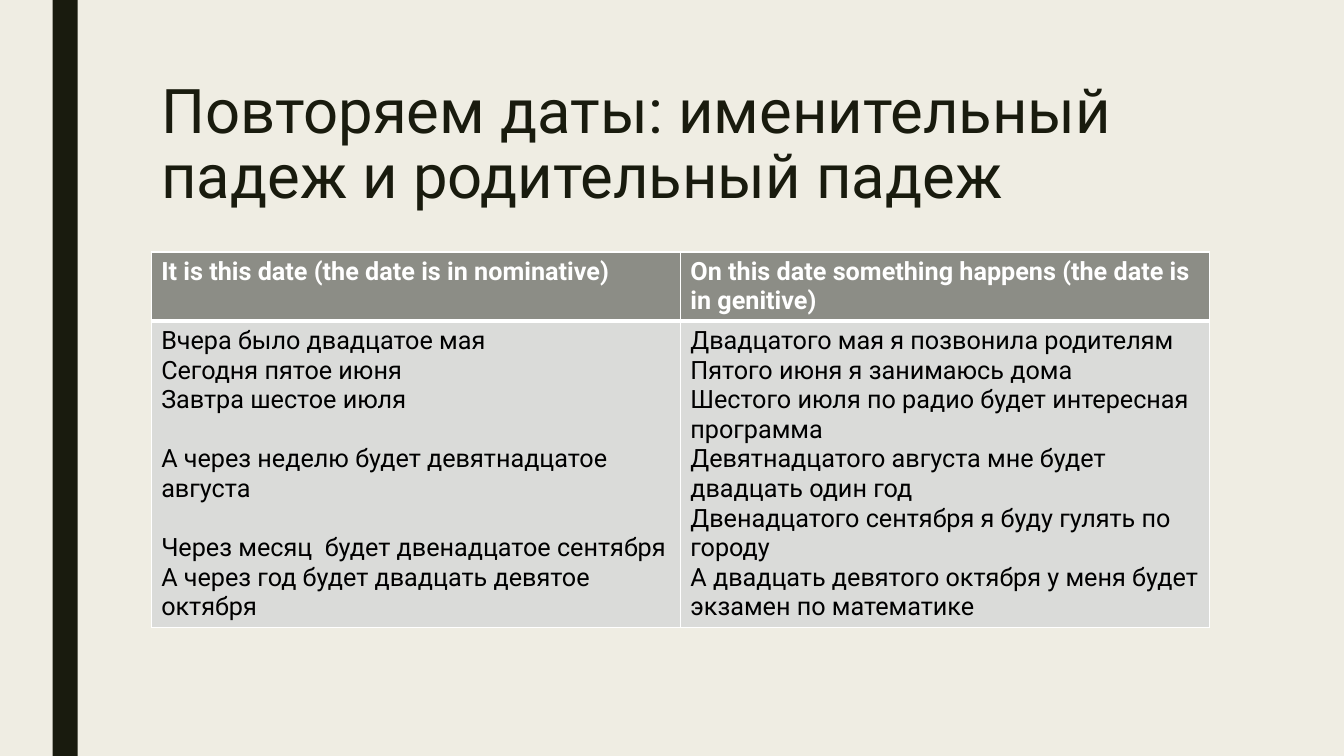
from lxml.etree import SubElement
from pptx import Presentation
from pptx.dml.color import RGBColor
from pptx.enum.shapes import MSO_SHAPE as Shape
from pptx.enum.text import MSO_ANCHOR as Anchor, PP_ALIGN as Align
from pptx.oxml.ns import qn
from pptx.util import Cm, Pt

PAPER = RGBColor(0xEF, 0xED, 0xE3)
INK = RGBColor(0x19, 0x1B, 0x0E)
HEADER_GRAY = RGBColor(0x8C, 0x8D, 0x86)
BODY_GRAY = RGBColor(0xDA, 0xDB, 0xD9)
WHITE = RGBColor(0xFF, 0xFF, 0xFF)
BLACK = RGBColor(0, 0, 0)
FONT = "Roboto"
BLANK_LINE = Pt(21.1)

# Each column: heading, then sentences with the space above each
COLUMNS = [
    ("It is this date (the date is in nominative)", [
        ("Вчера было двадцатое мая", 0),
        ("Сегодня пятое июня", 0),
        ("Завтра шестое июля", 0),
        ("А через неделю будет девятнадцатое августа", BLANK_LINE),
        ("Через месяц  будет двенадцатое сентября", BLANK_LINE),
        ("А через год будет двадцать девятое октября", 0),
    ]),
    ("On this date something happens (the date is in genitive)", [
        ("Двадцатого мая я позвонила родителям", 0),
        ("Пятого июня я занимаюсь дома", 0),
        ("Шестого июля по радио будет интересная программа", 0),
        ("Девятнадцатого августа мне будет двадцать один год", 0),
        ("Двенадцатого сентября я буду гулять по городу", 0),
        ("А двадцать девятого октября у меня будет экзамен по математике", 0),
    ]),
]


def add_text(paragraph, text, size, color, bold=False):
    run = paragraph.add_run()
    run.text = text
    run.font.name = FONT
    run.font.size = Pt(size)
    run.font.color.rgb = color
    run.font.bold = bold


def style_cell(cell, fill, top, bottom):
    """Fill a cell and draw its white borders; top and bottom are widths in points."""
    properties = cell._tc.get_or_add_tcPr()
    for side, width in (("L", 1), ("R", 1), ("T", top), ("B", bottom)):
        border = SubElement(properties, qn(f"a:ln{side}"), w=str(Pt(width)))
        SubElement(SubElement(border, qn("a:solidFill")), qn("a:srgbClr"), val=str(WHITE))
    cell.fill.solid()
    cell.fill.fore_color.rgb = fill


prs = Presentation()
prs.slide_width, prs.slide_height = Cm(33.87), Cm(19.05)
slide = prs.slides.add_slide(prs.slide_layouts[5])
slide.background.fill.solid()
slide.background.fill.fore_color.rgb = PAPER

side_bar = slide.shapes.add_shape(Shape.RECTANGLE, Cm(1.33), 0, Cm(0.63), prs.slide_height)
side_bar.shadow.inherit = False
side_bar.fill.solid()
side_bar.fill.fore_color.rgb = INK
side_bar.line.fill.background()

title = slide.shapes.title
title.left, title.top, title.width, title.height = Cm(3.81), Cm(1.9), Cm(26.67), Cm(4.11)
title.text_frame.word_wrap = True
title.text_frame.vertical_anchor = Anchor.TOP
heading = title.text_frame.paragraphs[0]
heading.alignment = Align.LEFT
heading.line_spacing = 0.89
add_text(heading, "Повторяем даты: именительный падеж и родительный падеж", 44, INK)

dates = slide.shapes.add_table(2, 2, Cm(3.81), Cm(6.35), Cm(26.67), Cm(9.46)).table
dates.rows[0].height = Cm(1.74)
dates.rows[1].height = Cm(7.72)

for column, (column_heading, sentences) in enumerate(COLUMNS):
    header, body = dates.cell(0, column), dates.cell(1, column)
    style_cell(header, HEADER_GRAY, top=1, bottom=3)
    style_cell(body, BODY_GRAY, top=3, bottom=1)
    add_text(header.text_frame.paragraphs[0], column_heading, 18, WHITE, bold=True)
    for number, (sentence, gap) in enumerate(sentences):
        frame = body.text_frame
        paragraph = frame.add_paragraph() if number else frame.paragraphs[0]
        paragraph.space_before = Pt(0) + gap
        add_text(paragraph, sentence, 18, BLACK)

prs.save("out.pptx")
